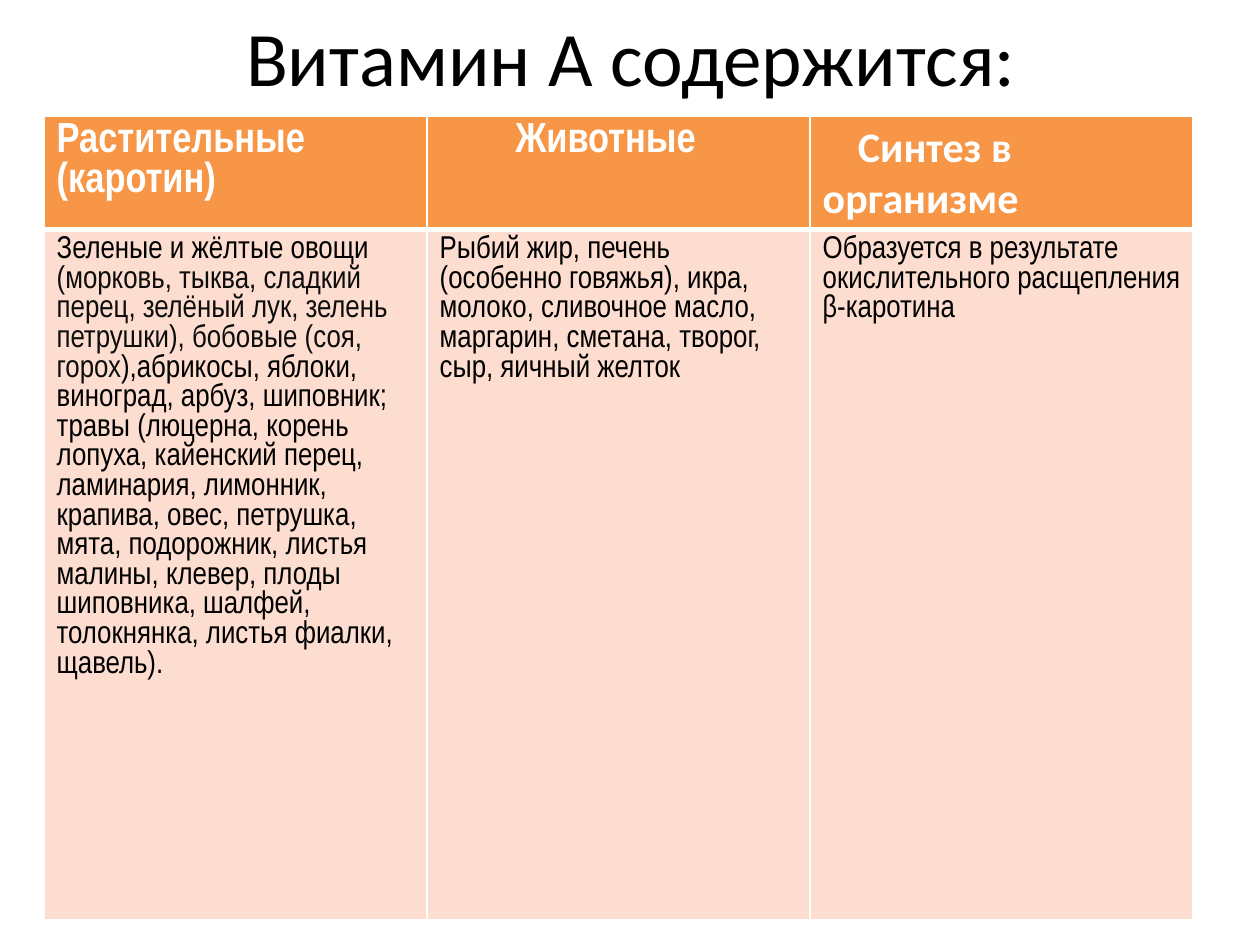
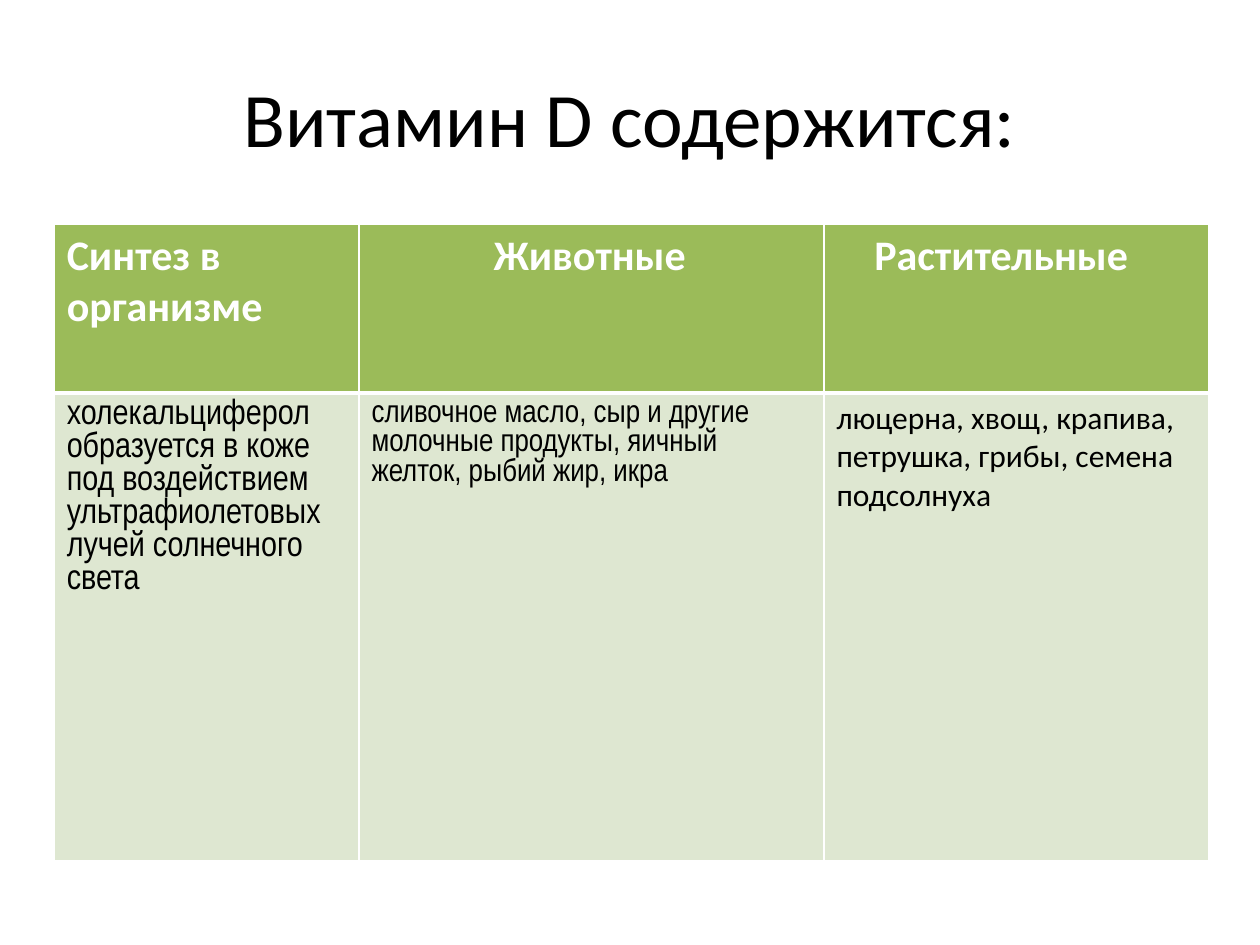
from lxml import etree
from pptx import Presentation
from pptx.dml.color import RGBColor
from pptx.enum.text import MSO_ANCHOR, PP_ALIGN
from pptx.oxml.ns import qn
from pptx.util import Inches, Pt

CENTER = PP_ALIGN.CENTER
MIDDLE = MSO_ANCHOR.MIDDLE
BLACK = RGBColor(0x00, 0x00, 0x00)
NEAR_BLACK = RGBColor(0x0D, 0x0D, 0x0D)
WHITE = RGBColor(0xFF, 0xFF, 0xFF)
ORANGE = RGBColor(0xF7, 0x96, 0x46)
PALE_ORANGE = RGBColor(0xFC, 0xDD, 0xCF)
GREEN = RGBColor(0x9B, 0xBB, 0x59)
PALE_GREEN = RGBColor(0xDE, 0xE7, 0xD1)
CALIBRI = "Calibri"
NARROW = "Arial Narrow"

VITAMINS = [
    {
        "title": "Витамин А содержится:",
        "title_box": (0.51, 0, 9, 0.89),
        "table_at": (0.35, 0.92),
        "columns": [3.04, 3.04, 3.04],
        "rows": [0.9, 5.48],
        "fills": [ORANGE, PALE_ORANGE],
        "headers": [
            ("Растительные (каротин)", NARROW, 0),
            ("Животные", NARROW, 0.6),
            ("Синтез в организме", CALIBRI, 0.28),
        ],
        "sources": [
            ([("Зеленые и жёлтые овощи ", BLACK),
              ("(морковь, тыква, сладкий перец, зелёный лук, зелень петрушки), "
               "бобовые (соя, горох", NEAR_BLACK),
              ("),абрикосы, яблоки, виноград, арбуз, шиповник; травы (люцерна, "
               "корень лопуха, кайенский перец, ламинария, лимонник, крапива, "
               "овес, петрушка, мята, подорожник, листья малины, клевер, плоды "
               "шиповника, шалфей, толокнянка, листья фиалки, щавель).", BLACK)],
             NARROW, 18),
            ([("Рыбий жир, печень (особенно говяжья), икра, молоко, сливочное "
               "масло, маргарин, сметана, творог, сыр, яичный желток", BLACK)],
             NARROW, 18),
            ([("Образуется в результате окислительного расщепления β-каротина",
               BLACK)], NARROW, 18),
        ],
    },
    {
        "title": "Витамин D содержится:",
        "title_box": (0.5, 0.3, 9, 1.25),
        "table_at": (0.43, 1.78),
        "columns": [2.42, 3.69, 3.05],
        "rows": [1.34, 3.71],
        "fills": [GREEN, PALE_GREEN],
        "headers": [
            ("Синтез в организме", CALIBRI, 0),
            ("Животные", CALIBRI, 0.97),
            ("Растительные", CALIBRI, 0.3),
        ],
        "sources": [
            ([("холекальциферол образуется в коже под воздействием "
               "ультрафиолетовых лучей солнечного света", BLACK)], NARROW, 20),
            ([("сливочное масло, сыр и другие молочные продукты, яичный желток, "
               "рыбий жир, икра", BLACK)], NARROW, 18),
            ([("люцерна, хвощ, крапива, петрушка, грибы, семена подсолнуха",
               BLACK)], CALIBRI, 18),
        ],
    },
]


def add_run(paragraph, text, font_name, size, color, bold=False):
    run = paragraph.add_run()
    run.text = text
    run.font.name = font_name
    run.font.size = Pt(size)
    run.font.bold = bold
    run.font.color.rgb = color


def style_cell(cell, fill, top_width, bottom_width):
    properties = cell._tc.get_or_add_tcPr()
    widths = {"lnL": 1, "lnR": 1, "lnT": top_width, "lnB": bottom_width}
    for side, width in widths.items():
        line = etree.SubElement(properties, qn(f"a:{side}"), w=str(Pt(width)))
        solid = etree.SubElement(line, qn("a:solidFill"))
        etree.SubElement(solid, qn("a:srgbClr"), val=str(WHITE))
    cell.fill.solid()
    cell.fill.fore_color.rgb = fill


presentation = Presentation()
presentation.slide_width = Inches(10)
presentation.slide_height = Inches(7.5)

for vitamin in VITAMINS:
    slide = presentation.slides.add_slide(presentation.slide_layouts[6])

    title = slide.shapes.add_textbox(*map(Inches, vitamin["title_box"]))
    title.text_frame.word_wrap = True
    title.text_frame.vertical_anchor = MIDDLE
    paragraph = title.text_frame.paragraphs[0]
    paragraph.alignment = CENTER
    add_run(paragraph, vitamin["title"], CALIBRI, 44, BLACK)

    left, top = vitamin["table_at"]
    columns, rows = vitamin["columns"], vitamin["rows"]
    table = slide.shapes.add_table(
        len(rows), len(columns), Inches(left), Inches(top),
        Inches(sum(columns)), Inches(sum(rows))).table
    for row, height in zip(table.rows, rows):
        row.height = Inches(height)
    header_fill, body_fill = vitamin["fills"]

    for index, width in enumerate(columns):
        table.columns[index].width = Inches(width)

        text, font_name, indent = vitamin["headers"][index]
        header = table.cell(0, index)
        style_cell(header, header_fill, 1, 3)
        paragraph = header.text_frame.paragraphs[0]
        paragraph._p.get_or_add_pPr().set("indent", str(Inches(indent)))
        add_run(paragraph, text, font_name, 24, WHITE, bold=True)

        pieces, font_name, size = vitamin["sources"][index]
        body = table.cell(1, index)
        style_cell(body, body_fill, 3, 1)
        for text, color in pieces:
            add_run(body.text_frame.paragraphs[0], text, font_name, size, color)

presentation.save("out.pptx")
